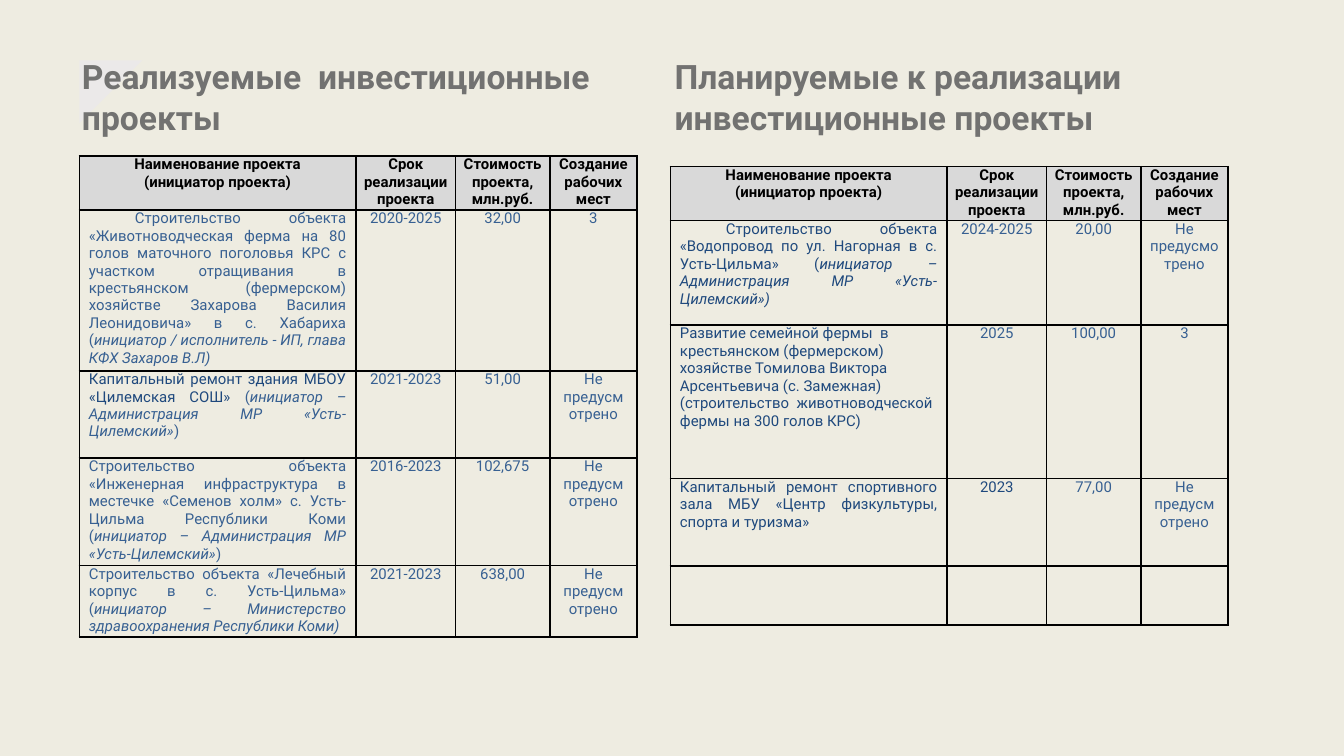
from dataclasses import dataclass

from lxml import etree
from pptx import Presentation
from pptx.dml.color import RGBColor
from pptx.enum import shapes, text
from pptx.oxml import ns
from pptx.util import Cm, Pt

FONT = "Roboto"
CREAM = RGBColor(0xEE, 0xEC, 0xE1)
PALE = RGBColor(0xEB, 0xE9, 0xE9)
SILVER = RGBColor(0xD9, 0xD9, 0xD9)
GREY = RGBColor(0x72, 0x72, 0x71)
BLACK = RGBColor(0, 0, 0)
NAVY = RGBColor(0x1F, 0x49, 0x7D)
BLUE = RGBColor(0x37, 0x60, 0x92)

LEFT, CENTER, JUSTIFY = text.PP_ALIGN.LEFT, text.PP_ALIGN.CENTER, text.PP_ALIGN.JUSTIFY
NARROW, WIDE = 0.13, 0.18  # side margins of a cell, cm
COLUMNS = (5.23, 1.88, 1.78, 1.65)
HEADER_HEIGHT = 0.99
HEADERS = (
    ("Наименование проекта", "(инициатор проекта)"),
    ("Срок реализации проекта",),
    ("Стоимость проекта, млн.руб.",),
    ("Создание рабочих мест",),
)
NOT_PLANNED = "Не предусмотрено"
DISTRICT = "инициатор – Администрация МР «Усть-Цилемский»"


@dataclass(frozen=True)
class Span:
    text: str
    color: RGBColor = BLUE
    italic: bool = False
    bold: bool = False
    size: float = 8


@dataclass(frozen=True)
class Project:
    height: float
    name: tuple[Span, ...] = ()
    values: tuple[str, ...] = ()
    align: text.PP_ALIGN = JUSTIFY
    indent: float = 0
    margin: float = WIDE
    term_color: RGBColor = BLUE


@dataclass(frozen=True)
class Section:
    title: str
    title_left: float
    title_width: float
    table_left: float
    table_top: float
    projects: tuple[Project, ...]


CURRENT = Section("Реализуемые  инвестиционные проекты", 1.3, 11, 1.5, 2.95, (
    Project(1.32, (
        Span("Строительство объекта «Животноводческая ферма на 80 голов маточного поголовья КРС "
             "с участком отращивания в крестьянском (фермерском) хозяйстве Захарова Василия "
             "Леонидовича» в с. Хабариха ("),
        Span("инициатор / исполнитель - ИП, глава КФХ Захаров В.Л)", italic=True),
    ), ("2020-2025", "32,00", "3"), indent=0.87, margin=NARROW),
    Project(1.65, (
        Span("Капитальный ремонт здания МБОУ «Цилемская СОШ»", NAVY),
        Span(" ("), Span(DISTRICT, italic=True), Span(")"),
    ), ("2021-2023", "51,00", NOT_PLANNED)),
    Project(1.65, (
        Span("Строительство объекта «Инженерная инфраструктура в местечке «Семенов холм» "
             "с. Усть-Цильма Республики Коми ("),
        Span(DISTRICT, italic=True), Span(")"),
    ), ("2016-2023", "102,675", NOT_PLANNED)),
    Project(1.12, (
        Span("Строительство объекта «Лечебный корпус в с. Усть-Цильма» ("),
        Span("инициатор – Министерство здравоохранения Республики Коми)", italic=True),
    ), ("2021-2023", "638,00", NOT_PLANNED)),
))

PLANNED = Section("Планируемые к реализации инвестиционные проекты", 12.5, 10.8, 12.67, 3.15, (
    Project(1.98, (
        Span("Строительство объекта «Водопровод по ул. Нагорная в с. Усть-Цильма» (", NAVY),
        Span(DISTRICT + ")", NAVY, italic=True),
    ), ("2024-2025", "20,00", NOT_PLANNED), indent=0.87, margin=NARROW),
    Project(2.9, (
        Span("Развитие семейной фермы  в крестьянском (фермерском) хозяйстве Томилова Виктора "
             "Арсентьевича (с. Замежная) (строительство  животноводческой фермы на 300 голов КРС)",
             NAVY),
    ), ("2025", "100,00", "3"), align=LEFT, margin=NARROW),
    Project(1.65, (
        Span("Капитальный ремонт спортивного зала МБУ «Центр физкультуры, спорта и туризма»", NAVY),
    ), ("2023", "77,00", NOT_PLANNED), term_color=NAVY),
    Project(1.12),
))


def write(para, spans: tuple[Span, ...], align: text.PP_ALIGN = LEFT, indent: float = 0) -> None:
    para.alignment = align
    if indent:
        para._p.get_or_add_pPr().set("indent", str(Cm(indent)))
    for span in spans:
        run = para.add_run()
        run.text = span.text
        font = run.font
        font.name, font.size = FONT, Pt(span.size)
        font.bold, font.italic = span.bold, span.italic
        font.color.rgb = span.color


def style_cell(cell, fill: RGBColor) -> None:
    """Draw a black 1 pt border on every side, then fill the cell."""
    properties = cell._tc.get_or_add_tcPr()
    for side in ("lnL", "lnR", "lnT", "lnB"):
        line = etree.SubElement(properties, ns.qn(f"a:{side}"), w=str(Pt(1)))
        solid = etree.SubElement(line, ns.qn("a:solidFill"))
        etree.SubElement(solid, ns.qn("a:srgbClr"), val=str(BLACK))
    cell.fill.solid()
    cell.fill.fore_color.rgb = fill


def set_margins(cell, side: float) -> None:
    cell.margin_left = cell.margin_right = Cm(side)
    cell.margin_top = cell.margin_bottom = 0


def add_title(page, section: Section) -> None:
    box = page.shapes.add_textbox(
        Cm(section.title_left), Cm(0.94), Cm(section.title_width), Cm(1.8))
    frame = box.text_frame
    frame.word_wrap = True
    frame.auto_size = text.MSO_AUTO_SIZE.SHAPE_TO_FIT_TEXT
    write(frame.paragraphs[0], (Span(section.title, GREY, bold=True, size=18),))


def add_project_table(page, section: Section) -> None:
    heights = (HEADER_HEIGHT, *(project.height for project in section.projects))
    table = page.shapes.add_table(
        len(heights), len(COLUMNS), Cm(section.table_left), Cm(section.table_top),
        Cm(sum(COLUMNS)), Cm(sum(heights))).table
    table.first_row = table.horz_banding = False
    for column, width in zip(table.columns, COLUMNS):
        column.width = Cm(width)
    for row, height in zip(table.rows, heights):
        row.height = Cm(height)

    for cell, lines in zip(table.rows[0].cells, HEADERS):
        style_cell(cell, SILVER)
        set_margins(cell, NARROW)
        for index, line in enumerate(lines):
            frame = cell.text_frame
            para = frame.add_paragraph() if index else frame.paragraphs[0]
            write(para, (Span(line, BLACK, bold=True),), CENTER)

    for number, project in enumerate(section.projects, start=1):
        cells = list(table.rows[number].cells)
        for cell in cells:
            style_cell(cell, CREAM)
        if not project.name:
            continue
        set_margins(cells[0], WIDE)
        write(cells[0].text_frame.paragraphs[0], project.name, project.align, project.indent)
        colors = (project.term_color, BLUE, BLUE)
        for cell, value, color in zip(cells[1:], project.values, colors):
            set_margins(cell, project.margin)
            write(cell.text_frame.paragraphs[0], (Span(value, color),), CENTER)


def add_corner(page) -> None:
    corner = page.shapes.add_shape(
        shapes.MSO_SHAPE.RIGHT_TRIANGLE, Cm(1.5), Cm(1.14), Cm(1.19), Cm(1.19))
    corner.rotation = 90
    corner.shadow.inherit = False
    corner.fill.solid()
    corner.fill.fore_color.rgb = PALE
    corner.line.fill.background()


def main() -> None:
    deck = Presentation()
    deck.slide_width, deck.slide_height = Cm(25.4), Cm(14.29)
    page = deck.slides.add_slide(deck.slide_layouts[6])
    page.background.fill.solid()
    page.background.fill.fore_color.rgb = CREAM
    add_corner(page)
    for section in (PLANNED, CURRENT):
        add_title(page, section)
        add_project_table(page, section)
    deck.save("out.pptx")


if __name__ == "__main__":
    main()
